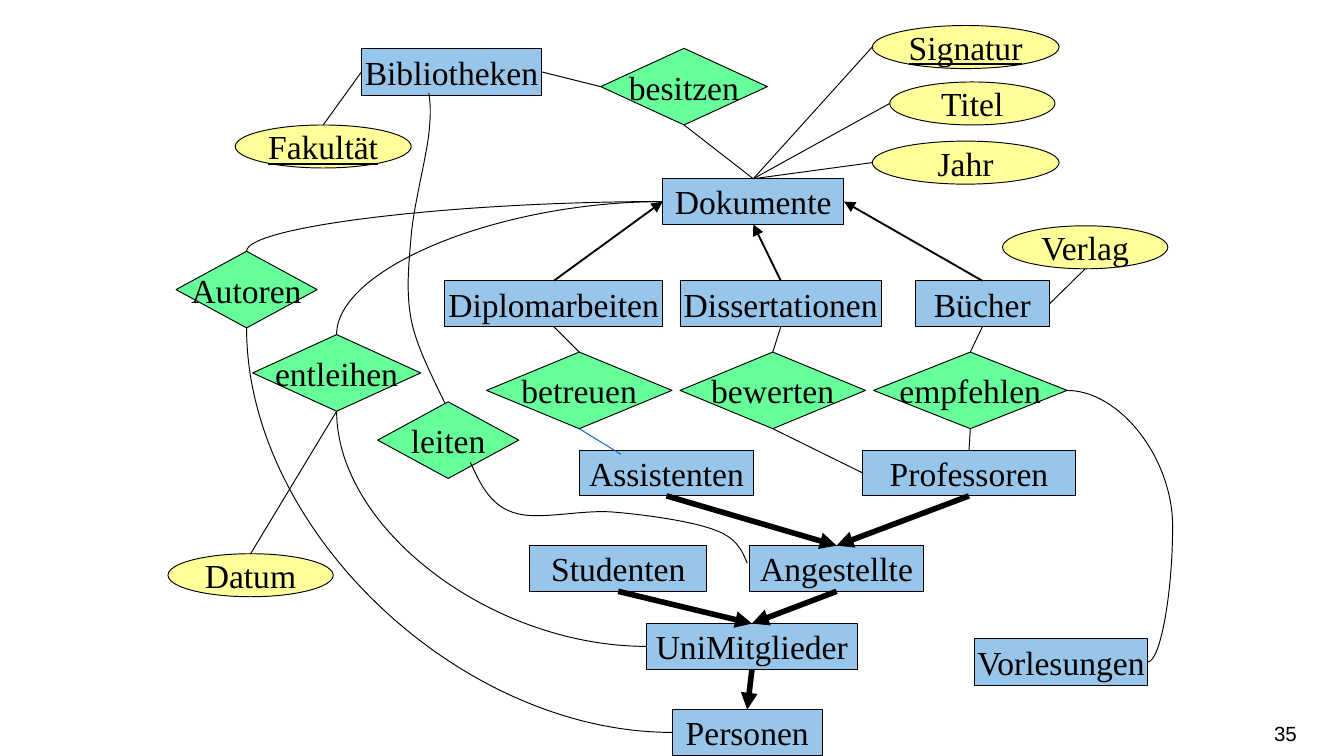
from dataclasses import dataclass

from lxml.etree import SubElement
from pptx import Presentation
from pptx.dml.color import RGBColor
from pptx.enum.shapes import MSO_CONNECTOR, MSO_SHAPE
from pptx.enum.text import MSO_ANCHOR, PP_ALIGN
from pptx.oxml.ns import qn
from pptx.util import Pt

SCALE = 9144  # EMU per px, 100 px to the inch
SLIDE_WIDTH = 1000
TOP, LEFT, BOTTOM, RIGHT = range(4)
ENTITY, RELATION, ATTRIBUTE = MSO_SHAPE.RECTANGLE, MSO_SHAPE.DIAMOND, MSO_SHAPE.OVAL


@dataclass(frozen=True)
class Theme:
    ink = RGBColor.from_string("000000")
    accent = RGBColor.from_string("0065BD")
    fills = {
        ENTITY: RGBColor.from_string("98C6EA"),
        RELATION: RGBColor.from_string("66FF99"),
        ATTRIBUTE: RGBColor.from_string("FFFF99"),
    }
    label = {"name": "Times New Roman", "size": Pt(18)}
    page = {"name": "Arial", "size": Pt(11)}
    thin, medium, thick = Pt(0.5), Pt(1), Pt(3)


THEME = Theme()


def px(*lengths):
    return [round(length * SCALE) for length in lengths]


def apply(target, formats):
    for name, value in formats.items():
        setattr(target, name, value)


def write(shape, text, font, frame_format, alignment):
    apply(shape.text_frame, {"vertical_anchor": MSO_ANCHOR.MIDDLE, **frame_format})
    paragraph = shape.text_frame.paragraphs[0]
    paragraph.alignment = alignment
    run = paragraph.add_run()
    run.text = text
    apply(run.font, font)
    run.font.color.rgb = THEME.ink


def place_nodes(slide, box, kind, nodes, font=None):
    """Place (name, left, top, width, height) nodes relative to the box."""
    placed = {}
    for name, left, top, width, height in nodes:
        shape = slide.shapes.add_shape(kind, *px(box[0] + left, box[1] + top, width, height))
        shape.shadow.inherit = False
        shape.fill.solid()
        shape.fill.fore_color.rgb = THEME.fills[kind]
        apply(shape.line, {"width": THEME.thin})
        shape.line.color.rgb = THEME.ink
        write(shape, name, {**THEME.label, **(font or {})}, {"word_wrap": False}, PP_ALIGN.CENTER)
        placed[name] = shape
    return placed


def draw_library(slide, box):
    return {
        **place_nodes(slide, box, ENTITY, [("Bibliotheken", 94, 0, 134, 35)]),
        **place_nodes(slide, box, RELATION, [("besitzen", 272, 0, 124, 57)]),
        **place_nodes(slide, box, ATTRIBUTE, [("Fakultät", 0, 57, 131, 32)], {"underline": True}),
    }


def draw_documents(slide, box):
    kinds = [("Diplomarbeiten", 162), ("Dissertationen", 150), ("Bücher", 100)]
    relations = [("betreuen", 138), ("bewerten", 138), ("empfehlen", 144)]
    entities = [("Dokumente", 162, 0, 135, 34)]
    entities += [(name, 175 * i, 76, width, 34) for i, (name, width) in enumerate(kinds)]
    diamonds = [(name, 31 + 144 * i, 129, width, 57) for i, (name, width) in enumerate(relations)]
    return {
        **place_nodes(slide, box, RELATION, diamonds),
        **place_nodes(slide, box, ENTITY, entities),
    }


def draw_people(slide, box):
    return place_nodes(slide, box, ENTITY, [
        ("Assistenten", 37, 0, 130, 34),
        ("Professoren", 248, 0, 158, 34),
        ("Studenten", 0, 71, 132, 34),
        ("Angestellte", 164, 71, 129, 34),
        ("UniMitglieder", 87, 129, 157, 34),
        ("Personen", 106, 193, 112, 34),
        ("Vorlesungen", 331, 140, 129, 35),
    ])


def draw_lending(slide, box):
    return {
        **place_nodes(slide, box, RELATION, [
            ("Autoren", 6, 0, 105, 57),
            ("entleihen", 63, 62, 125, 57),
            ("leiten", 156, 112, 105, 57),
        ]),
        **place_nodes(slide, box, ATTRIBUTE, [("Datum", 0, 225, 123, 32)]),
    }


def draw_attributes(slide, box):
    return {
        **place_nodes(slide, box, ATTRIBUTE, [("Signatur", 0, 0, 139, 32)], {"underline": True}),
        **place_nodes(slide, box, ATTRIBUTE, [
            ("Titel", 13, 42, 123, 32),
            ("Jahr", 0, 86, 139, 32),
            ("Verlag", 97, 149, 123, 32),
        ]),
    }


def side_point(shape, side):
    x = {LEFT: 0, RIGHT: shape.width}.get(side, shape.width // 2)
    y = {TOP: 0, BOTTOM: shape.height}.get(side, shape.height // 2)
    return shape.left + x, shape.top + y


def add_line(slide, start, end, width, color=THEME.ink, arrow=False, kind=MSO_CONNECTOR.STRAIGHT):
    connector = slide.shapes.add_connector(kind, *start, *end)
    connector.line.color.rgb = color
    connector.line.width = width
    properties = connector._element.spPr
    if arrow:
        SubElement(properties.find(qn("a:ln")), qn("a:tailEnd"), type="triangle")
    SubElement(properties, qn("a:effectLst"))
    return connector


def link(nodes, slide, start, start_side, end, end_side, width=THEME.thin, **options):
    first, last = nodes[start], nodes[end]
    connector = add_line(slide, side_point(first, start_side), side_point(last, end_side),
                         width, **options)
    # Ovals number their connection sites differently, so they stay unjoined
    if first.auto_shape_type != ATTRIBUTE:
        connector.begin_connect(first, start_side)
    if last.auto_shape_type != ATTRIBUTE:
        connector.end_connect(last, end_side)
    return connector


def draw_links(slide, nodes):
    # Plain links
    for ends in [
        ("Bibliotheken", LEFT, "Fakultät", TOP),
        ("besitzen", LEFT, "Bibliotheken", RIGHT),
        ("Dokumente", TOP, "besitzen", BOTTOM),
        ("Dokumente", TOP, "Signatur", LEFT),
        ("Dokumente", TOP, "Titel", LEFT),
        ("Dokumente", TOP, "Jahr", LEFT),
        ("Bücher", RIGHT, "Verlag", BOTTOM),
        ("betreuen", TOP, "Diplomarbeiten", BOTTOM),
        ("Dissertationen", BOTTOM, "bewerten", TOP),
        ("Bücher", BOTTOM, "empfehlen", TOP),
        ("empfehlen", BOTTOM, "Professoren", TOP),
        ("bewerten", BOTTOM, "Professoren", LEFT),
        ("entleihen", BOTTOM, "Datum", TOP),
    ]:
        link(nodes, slide, *ends)
    add_line(slide, side_point(nodes["betreuen"], BOTTOM), px(462, 338), THEME.thin, THEME.accent)

    # Generalisation arrows
    for name, side in [("Diplomarbeiten", LEFT), ("Dissertationen", BOTTOM), ("Bücher", RIGHT)]:
        link(nodes, slide, name, TOP, "Dokumente", side, THEME.medium, arrow=True)
    for name, parent in [("Professoren", "Angestellte"), ("Assistenten", "Angestellte"),
                         ("Studenten", "UniMitglieder"), ("Angestellte", "UniMitglieder"),
                         ("UniMitglieder", "Personen")]:
        link(nodes, slide, name, BOTTOM, parent, TOP, THEME.thick, arrow=True)

    # Quarter curves from an entity's left side to a relation
    for entity, relation, side in [("Personen", "Autoren", BOTTOM), ("UniMitglieder", "entleihen", BOTTOM),
                                   ("Dokumente", "Autoren", TOP), ("Dokumente", "entleihen", TOP)]:
        curve = link(nodes, slide, entity, LEFT, relation, side, kind=MSO_CONNECTOR.CURVE)
        curve._element.spPr.find(qn("a:prstGeom")).set("prst", "curvedConnector2")

    # Curve that bulges out to the right
    curve = link(nodes, slide, "empfehlen", RIGHT, "Vorlesungen", RIGHT, kind=MSO_CONNECTOR.CURVE)
    guides = curve._element.spPr.find(qn("a:prstGeom")).get_or_add_avLst()
    SubElement(guides, qn("a:gd"), name="adj1", fmla="val 130900")


def draw_bezier(slide, start, points):
    """Draw a curve; each three points are two controls and an end."""
    builder = slide.shapes.build_freeform(*start, scale=SCALE)
    builder.add_line_segments(points, close=False)
    shape = builder.convert_to_shape()
    shape.shadow.inherit = False
    shape.fill.background()
    shape.line.color.rgb = THEME.ink
    shape.line.width = THEME.thin
    outline = next(shape._element.iter(qn("a:path")))
    segments = outline.findall(qn("a:lnTo"))
    for i in range(0, len(segments), 3):
        bezier = SubElement(outline, qn("a:cubicBezTo"))
        for segment in segments[i:i + 3]:
            bezier.append(segment[0])
            outline.remove(segment)


def draw_leadership(slide):
    draw_bezier(slide, (331, 300), [(321, 279), (310, 258), (306, 238), (302, 217), (304, 198), (306, 175),
                                    (308, 152), (317, 118), (319, 100), (321, 82), (320, 76), (319, 69)])
    draw_bezier(slide, (556, 419), [(552, 409), (548, 400), (531, 394), (515, 388), (481, 383), (456, 381),
                                    (431, 379), (399, 388), (381, 381), (364, 375), (357, 359), (350, 344)])


def draw_page_number(slide, box):
    shape = slide.shapes.add_textbox(*px(*box))
    write(shape, "35", THEME.page, {"word_wrap": True, "margin_left": 0, "margin_right": 0},
          PP_ALIGN.RIGHT)


def main():
    presentation = Presentation()
    presentation.slide_width, presentation.slide_height = px(SLIDE_WIDTH, SLIDE_WIDTH * 9 / 16)
    slide = presentation.slides.add_slide(presentation.slide_layouts[6])
    draw_page_number(slide, (741, 531, 224, 30))
    nodes = {
        **draw_documents(slide, (331, 133)),
        **draw_people(slide, (394, 335)),
        **draw_lending(slide, (125, 187)),
        **draw_library(slide, (175, 36)),
        **draw_attributes(slide, (649, 19)),
    }
    draw_links(slide, nodes)
    draw_leadership(slide)
    presentation.save("out.pptx")


if __name__ == "__main__":
    main()
